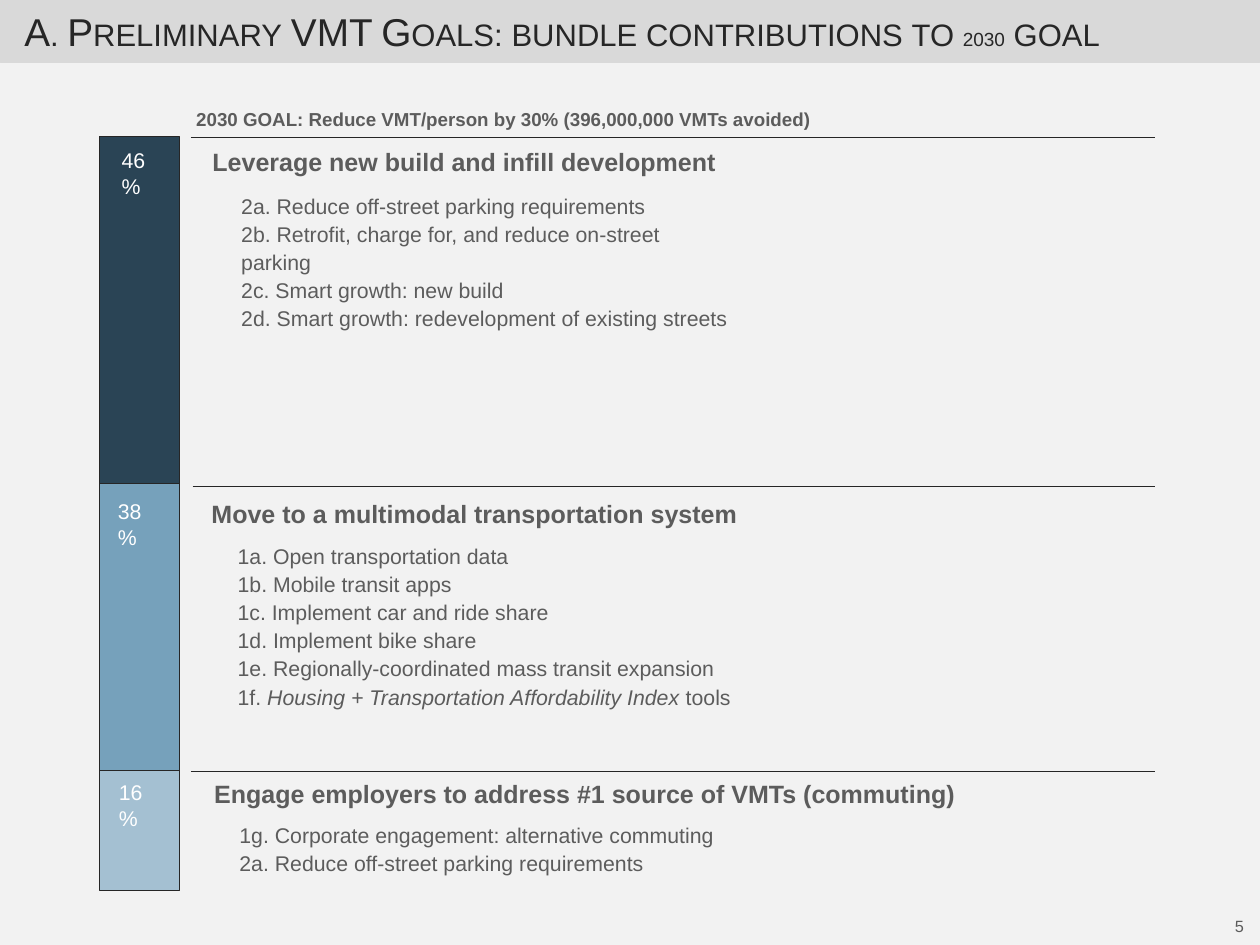
from pptx import Presentation
from pptx.dml.color import RGBColor
from pptx.enum.shapes import MSO_CONNECTOR, MSO_SHAPE
from pptx.enum.text import MSO_ANCHOR, PP_ALIGN
from pptx.util import Inches, Pt
from lxml import etree

RECTANGLE = MSO_SHAPE.RECTANGLE
STRAIGHT = MSO_CONNECTOR.STRAIGHT
LEFT, RIGHT = PP_ALIGN.LEFT, PP_ALIGN.RIGHT
TOP, MIDDLE = MSO_ANCHOR.TOP, MSO_ANCHOR.MIDDLE
PAPER = RGBColor(0xF2, 0xF2, 0xF2)
BAND = RGBColor(0xD9, 0xD9, 0xD9)
INK = RGBColor(0x26, 0x26, 0x26)
GREY = RGBColor(0x5C, 0x5C, 0x5C)
WHITE = RGBColor(0xFF, 0xFF, 0xFF)
NAVY = RGBColor(0x2A, 0x44, 0x55)
BLUE = RGBColor(0x76, 0xA1, 0xBB)
PALE = RGBColor(0xA4, 0xC0, 0xD2)

deck = Presentation()
deck.slide_width, deck.slide_height = Inches(14), Inches(10.5)
COL, ROW = deck.slide_width / 140, deck.slide_height / 105
page = deck.slides.add_slide(deck.slide_layouts[6])
page.background.fill.solid()
page.background.fill.fore_color.rgb = PAPER


def add_block(area, fill, outline):
    left, top, width, height = area
    block = page.shapes.add_shape(RECTANGLE, int(left * COL), int(top * ROW),
                                  int(width * COL), int(height * ROW))
    block.shadow.inherit = False
    block.fill.solid()
    block.fill.fore_color.rgb = fill
    block.line.color.rgb = outline
    block.line.width = Pt(0.75)


def add_text(area, paragraphs, size, color=GREY, bold=False, align=LEFT,
             anchor=TOP, wrap=True, spacing=None, caps=None):
    left, top, width, height = area
    box = page.shapes.add_textbox(int(left * COL), int(top * ROW),
                                  int(width * COL), int(height * ROW))
    frame = box.text_frame
    frame_format = {"margin_left": Inches(0.14), "margin_right": Inches(0.14),
                    "margin_top": Inches(0.07), "margin_bottom": Inches(0.07),
                    "word_wrap": wrap, "vertical_anchor": anchor}
    for name, value in frame_format.items():
        setattr(frame, name, value)
    for index, spans in enumerate(paragraphs):
        para = frame.paragraphs[0] if index == 0 else frame.add_paragraph()
        para.alignment = align
        para.line_spacing = spacing
        for text, changes in spans:
            span = para.add_run()
            span.text = text
            span.font.color.rgb = color
            font_format = {"name": "Arial", "size": Pt(size), "bold": bold, **changes}
            for name, value in font_format.items():
                setattr(span.font, name, value)
            if caps:
                span.font._element.set("cap", caps)


add_text((132.4, 101.1, 7.2, 3.7), [[("5", {})]], 13, align=RIGHT)
add_block((0, 0, 140, 6.9), BAND, BAND)
add_text((1.3, 0, 136.7, 6.9),
         [[("A. Preliminary VMT Goals: bundle contributions to ", {}),
           ("2030", {"size": Pt(19)}), (" goal", {})]],
         31, color=INK, anchor=MIDDLE, caps="small")
add_text((20.4, 11.3, 78.7, 4),
         [[("2030 GOAL: Reduce VMT/person by 30% (396,000,000 VMTs avoided)", {})]],
         15, bold=True)

bundles = [
    {"share": 46, "fill": NAVY, "label": (12.1, 15.7), "rule": (21.2, 15.3),
     "heading": "Leverage new build and infill development",
     "heading_area": (22.2, 15.6, 121.5, 8.1), "list_area": (25.4, 20.5, 57.4, 20.2),
     "actions": [[("2a. Reduce off-street parking requirements", {})],
                 [("2b. Retrofit, charge for, and reduce on-street parking", {})],
                 [("2c. Smart growth: new build", {})],
                 [("2d. Smart growth: redevelopment of existing streets", {})]]},
    {"share": 38, "fill": BLUE, "label": (11.7, 54.7), "rule": (21.4, 54),
     "heading": "Move to a multimodal transportation system",
     "heading_area": (22.1, 54.7, 61.7, 11.5), "list_area": (25, 59.4, 67.2, 23.4),
     "actions": [[("1a. Open transportation data", {})],
                 [("1b. Mobile transit apps", {})],
                 [("1c. Implement car and ride share", {})],
                 [("1d. Implement bike share", {})],
                 [("1e. Regionally-coordinated mass transit expansion", {})],
                 [("1f. ", {}),
                  ("Housing + Transportation Affordability Index ", {"italic": True}),
                  ("tools", {})]]},
    {"share": 16, "fill": PALE, "label": (11.8, 85.9), "rule": (21.2, 85.7),
     "heading": "Engage employers to address #1 source of VMTs (commuting)",
     "heading_area": (22.4, 85.8, 85.9, 4.8), "list_area": (25.2, 90.4, 62.8, 10.8),
     "actions": [[("1g. Corporate engagement: alternative commuting", {})],
                 [("2a. Reduce off-street parking requirements", {})]]},
]

BAR_ROWS = 83.8
bar_top = 15.2
for bundle in bundles:
    bar_height = BAR_ROWS * bundle["share"] / 100
    add_block((11.1, bar_top, 8.8, bar_height), bundle["fill"], INK)
    bar_top += bar_height
    add_text((*bundle["label"], 7.5, 4.2), [[(f"{bundle['share']}%", {})]],
             17, color=WHITE, wrap=False)
    add_text(bundle["heading_area"], [[(bundle["heading"], {})]], 20, bold=True)
    add_text(bundle["list_area"], bundle["actions"], 17, spacing=1.1)
    rule_left, rule_top = bundle["rule"]
    rule = page.shapes.add_connector(STRAIGHT, int(rule_left * COL), int(rule_top * ROW),
                                     int(128.3 * COL), int(rule_top * ROW))
    rule.line.color.rgb = INK
    rule.line.width = Pt(0.75)
    etree.SubElement(rule._element.spPr,
                     "{http://schemas.openxmlformats.org/drawingml/2006/main}effectLst")

deck.save("out.pptx")
